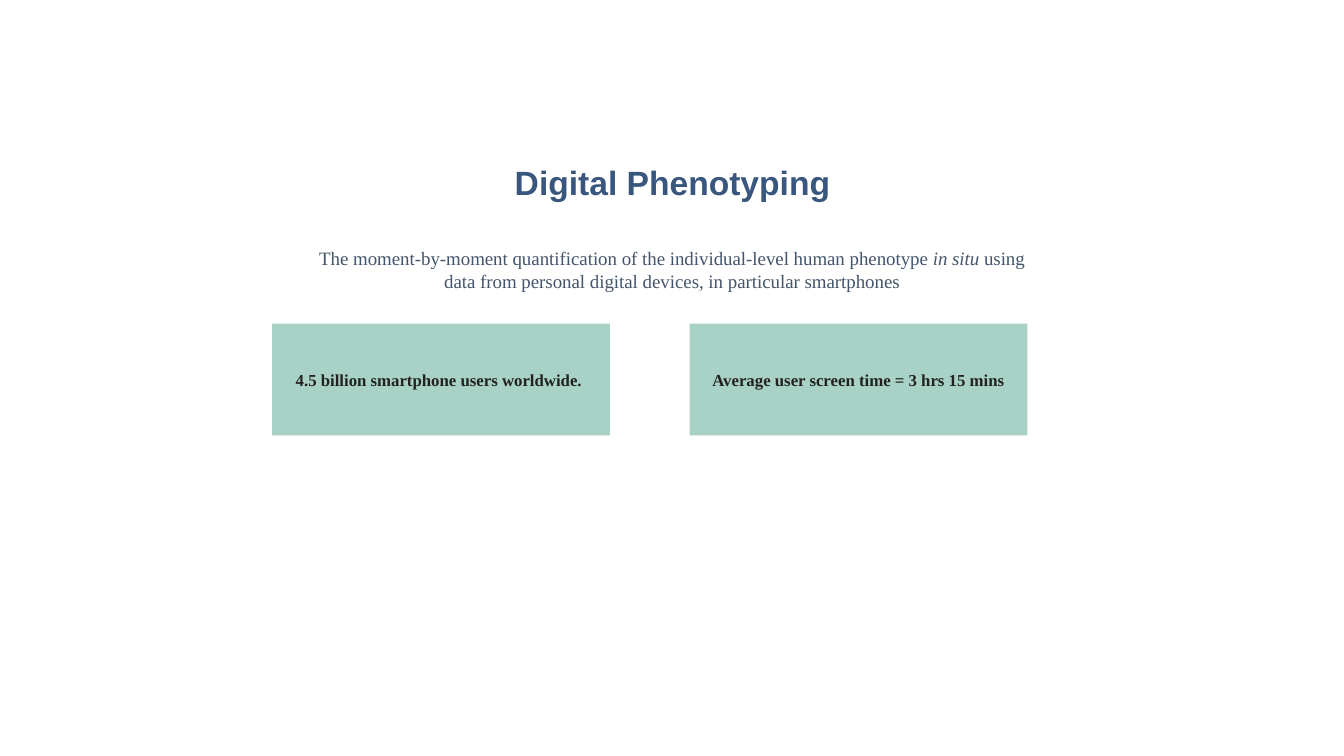
from lxml import etree
from pptx import Presentation
from pptx.dml.color import RGBColor
from pptx.enum.shapes import MSO_SHAPE
from pptx.enum.text import MSO_ANCHOR, PP_ALIGN
from pptx.oxml.ns import qn
from pptx.util import Inches, Pt

RECTANGLE = MSO_SHAPE.RECTANGLE
TOP, MIDDLE = MSO_ANCHOR.TOP, MSO_ANCHOR.MIDDLE
CENTER = PP_ALIGN.CENTER
SERIF = "Times New Roman"


def color(hex_value):
    return RGBColor.from_string(hex_value)


def write(shape, *parts, size, ink, font=SERIF, bold=False, anchor=TOP, inset=0.1):
    """Fill a shape with one centred paragraph; every second part is italic."""
    frame = shape.text_frame
    frame.word_wrap = True
    frame.vertical_anchor = anchor
    frame.margin_left = frame.margin_right = Inches(0.1)
    frame.margin_top = frame.margin_bottom = Inches(inset)
    paragraph = frame.paragraphs[0]
    paragraph.alignment = CENTER
    for index, part in enumerate(parts):
        run = paragraph.add_run()
        run.text = part
        run.font.name = font
        run.font.size = Pt(size)
        run.font.bold = bold
        run.font.italic = index % 2 == 1
        run.font.color.rgb = color(ink)


prs = Presentation()
prs.slide_width, prs.slide_height = Inches(13.33), Inches(7.5)
slide = prs.slides.add_slide(prs.slide_layouts[6])
shapes = slide.shapes

title = shapes.add_textbox(Inches(0.86), Inches(1.56), Inches(11.62), Inches(0.5))
write(title, "Digital Phenotyping", size=24, ink="39577E", font="Arial", bold=True, inset=0.05)

definition = shapes.add_textbox(Inches(2.89), Inches(2.35), Inches(7.55), Inches(0.66))
write(
    definition,
    "The moment-by-moment quantification of the individual-level human phenotype ",
    "in situ",
    " using data from personal digital devices, in particular smartphones",
    size=13.5,
    ink="44546A",
)

facts = ["4.5 billion smartphone users worldwide. ", "Average user screen time = 3 hrs 15 mins"]
for column, fact in enumerate(facts):
    card = shapes.add_shape(
        RECTANGLE, Inches(2.7 + 4.14 * column), Inches(3.21), Inches(3.35), Inches(1.11)
    )
    card.shadow.inherit = False
    card.line.fill.background()
    card.fill.solid()
    card.fill.fore_color.rgb = color("4FA48B")
    fill_color = card.fill._xPr.find(qn("a:solidFill"))[0]
    etree.SubElement(fill_color, qn("a:alpha"), val="49000")
    write(card, fact, size=12, ink="222222", bold=True, anchor=MIDDLE)

prs.save("out.pptx")
